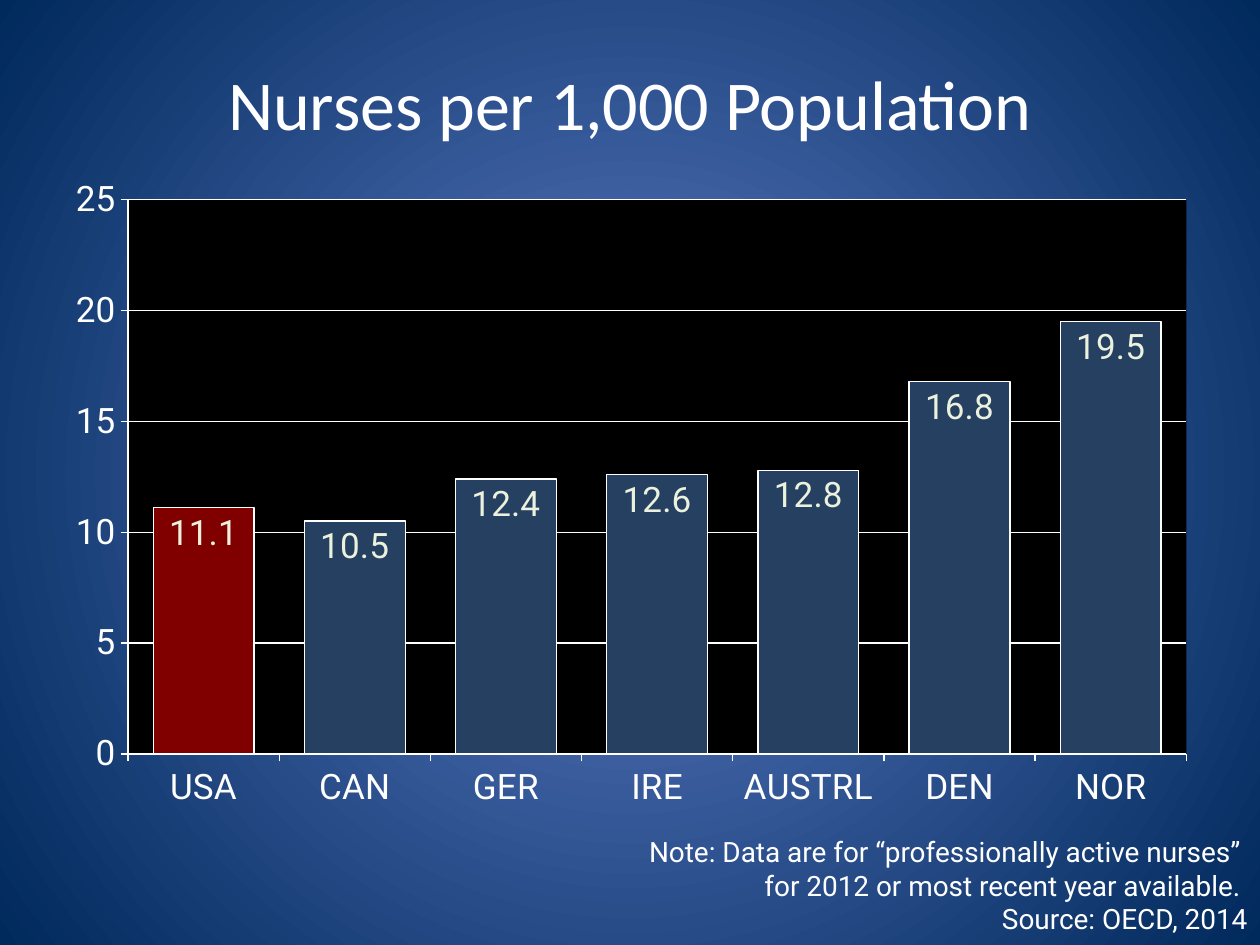
from pptx import Presentation
from pptx.chart.data import CategoryChartData
from pptx.dml.color import RGBColor
from pptx.enum.chart import XL_CHART_TYPE as Kind, XL_LABEL_POSITION as Spot
from pptx.enum.chart import XL_TICK_MARK as Tick
from pptx.enum.text import MSO_ANCHOR as Anchor, PP_ALIGN as Align
from pptx.oxml import parse_xml
from pptx.oxml.ns import nsdecls, qn
from pptx.util import Inches, Pt

WHITE = "FFFFFF"
NURSES = {"USA": 11.1, "CAN": 10.5, "GER": 12.4, "IRE": 12.6,
          "AUSTRL": 12.8, "DEN": 16.8, "NOR": 19.5}
NOTE = ["Note: Data are for “professionally active nurses” ",
        "for 2012 or most recent year available. ",
        "Source: OECD, 2014"]


def rgb(code):
    return RGBColor.from_string(code)


def set_font(font, size, name="Roboto", color=WHITE):
    font.size, font.name = Pt(size), name
    font.bold = False
    font.color.rgb = rgb(color)


def set_fill(fill, color):
    fill.solid()
    fill.fore_color.rgb = rgb(color)


def set_line(line, color=WHITE):
    line.color.rgb = rgb(color)
    line.width = Pt(0.75)


def set_back(slide, inner, outer):
    """Fill the background with a gradient that spreads from the centre."""
    fill = slide.background.fill
    fill.gradient()
    for stop, color in zip(fill.gradient_stops, (inner, outer)):
        stop.color.rgb = rgb(color)
    lin = next(slide.element.iter(qn("a:lin")))
    lin.getparent().replace(lin, parse_xml(
        f'<a:path {nsdecls("a")} path="circle">'
        '<a:fillToRect l="50000" t="50000" r="50000" b="50000"/></a:path>'))


def add_text(slide, box, lines, size, name, align):
    frame = slide.shapes.add_textbox(*map(Inches, box)).text_frame
    frame.word_wrap = True
    frame.vertical_anchor = Anchor.MIDDLE
    frame.text = "\n".join(lines)
    for par in frame.paragraphs:
        par.alignment = align
        set_font(par.font, size, name)


def set_plot(chart, color, x, y, w, h):
    """Colour the plot area and place its inside, in parts of the chart."""
    area = next(chart.element.iter(qn("c:plotArea")))
    for old in area.findall(qn("c:layout")):
        area.remove(old)
    sides = "".join(f'<c:{key} val="{val}"/>' for key, val in
                    dict(x=x, y=y, w=w, h=h).items())
    area.insert(0, parse_xml(
        f'<c:layout {nsdecls("c")}><c:manualLayout>'
        '<c:layoutTarget val="inner"/><c:xMode val="edge"/>'
        f'<c:yMode val="edge"/>{sides}</c:manualLayout></c:layout>'))
    area.append(parse_xml(
        f'<c:spPr {nsdecls("c", "a")}><a:solidFill>'
        f'<a:srgbClr val="{color}"/></a:solidFill></c:spPr>'))


def set_axis(axis):
    axis.major_tick_mark, axis.minor_tick_mark = Tick.OUTSIDE, Tick.NONE
    set_font(axis.tick_labels.font, 20)
    set_line(axis.format.line)


def set_bars(plot):
    plot.gap_width, plot.overlap = 50, -5
    plot.vary_by_categories = False
    bars = plot.series[0]
    bars.invert_if_negative = False
    for part, color in ((bars, "254061"), (bars.points[0], "800000")):
        set_fill(part.format.fill, color)
        set_line(part.format.line)
    labels = bars.data_labels
    labels.show_value = True
    labels.position = Spot.INSIDE_END
    labels.number_format, labels.number_format_is_linked = "#,##0.0", False
    set_font(labels.font, 20, color="EBF1DD")


def add_bars(slide, box, values):
    data = CategoryChartData()
    data.categories = list(values)
    data.add_series("Series 1", list(values.values()))
    chart = slide.shapes.add_chart(
        Kind.COLUMN_CLUSTERED, *map(Inches, box), data).chart
    chart.has_legend = chart.has_title = False
    set_font(chart.font, 18, "Calibri")
    set_plot(chart, "000000", 0.065, 0.051, 0.916, 0.846)
    set_bars(chart.plots[0])
    set_axis(chart.category_axis)
    scale = chart.value_axis
    set_axis(scale)
    scale.minimum_scale, scale.maximum_scale, scale.major_unit = 0, 25, 5
    scale.tick_labels.number_format = "#,##0"
    scale.tick_labels.number_format_is_linked = False
    set_line(scale.major_gridlines.format.line)


def main():
    deck = Presentation()
    deck.slide_width, deck.slide_height = Inches(10), Inches(7.5)
    slide = deck.slides.add_slide(deck.slide_layouts[6])
    set_back(slide, "5E7CC5", "00295C")
    add_text(slide, (4.41, 6.57, 5.59, 0.91), NOTE, 16, "Roboto", Align.RIGHT)
    add_text(slide, (0, 0.19, 10, 1.25), ["Nurses per 1,000 Population"],
             40, "Calibri", Align.CENTER)
    add_bars(slide, (0.42, 1.32, 9.17, 5.2), NURSES)
    deck.save("out.pptx")


if __name__ == "__main__":
    main()
